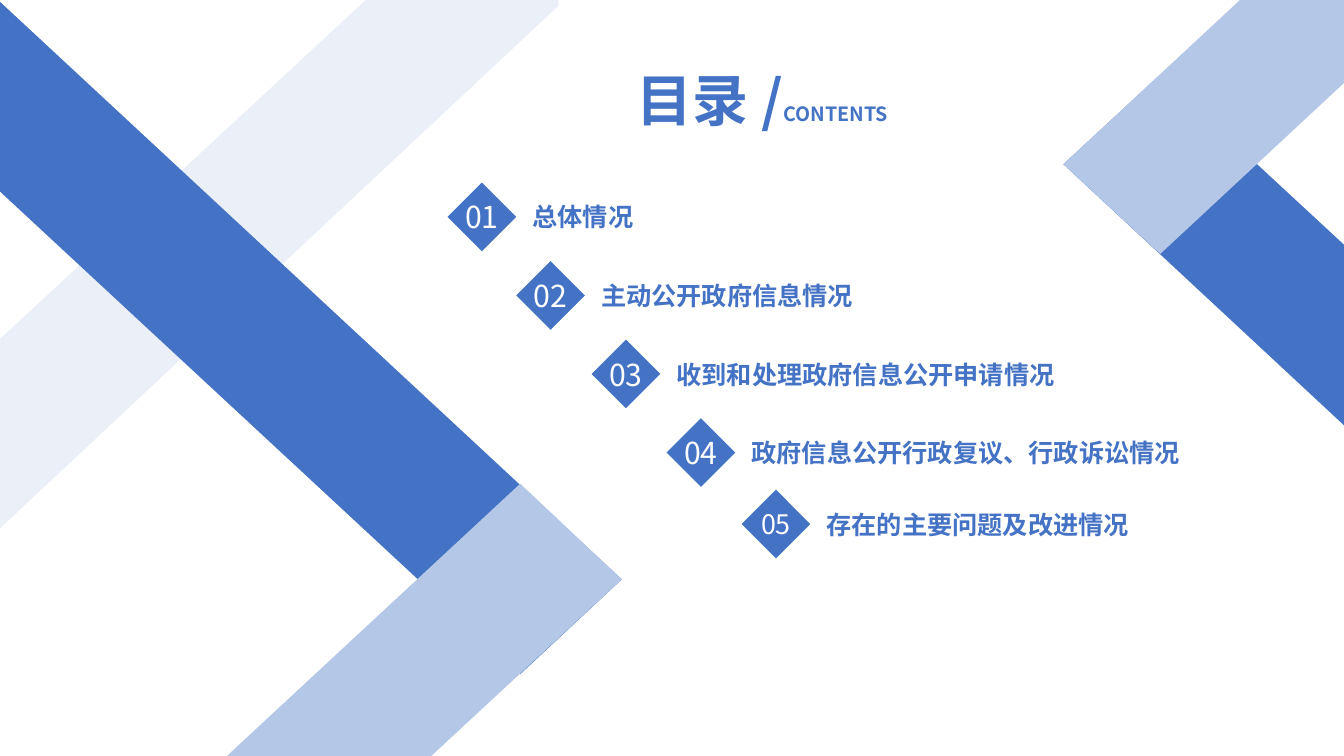
from dataclasses import dataclass

from lxml import etree
from pptx import Presentation
from pptx.dml.color import RGBColor
from pptx.enum.shapes import MSO_SHAPE
from pptx.enum.text import MSO_ANCHOR, MSO_AUTO_SIZE, PP_ALIGN
from pptx.oxml.ns import qn
from pptx.util import Cm, Pt

DIAMOND = MSO_SHAPE.DIAMOND
TOP, MIDDLE = MSO_ANCHOR.TOP, MSO_ANCHOR.MIDDLE
FIXED = MSO_AUTO_SIZE.NONE
CENTER, JUSTIFY = PP_ALIGN.CENTER, PP_ALIGN.JUSTIFY


@dataclass(frozen=True)
class Theme:
    font: str = "Noto Sans CJK SC"
    blue: RGBColor = RGBColor(0x44, 0x72, 0xC4)
    light: RGBColor = RGBColor(0xB4, 0xC7, 0xE7)
    white: RGBColor = RGBColor(0xFF, 0xFF, 0xFF)
    head: float = 40
    sub: float = 14
    label: float = 18


THEME = Theme()

# Band corners in cm, relative to the box of their corner of the slide
PALE = [(14.07, 0), (9.22, 0), (-0.05, 8.59), (-0.05, 13.36), (14.07, 0.15)]
LEFT_DOWN = [(13.11, 16.99), (15.67, 14.6), (-0.05, 0), (-0.05, 4.78)]
LEFT_BACK = [(10.87, 19.05), (15.67, 14.6), (13.11, 12.19), (5.72, 19.05)]
RIGHT_DOWN = [(7.16, 6.25), (2.44, 1.88), (0, 4.14), (7.16, 10.8)]
RIGHT_BACK = [(7.16, 0), (4.45, 0), (0, 4.14), (2.44, 6.4), (7.16, 2.01)]

# Left, top and label width in cm, number size in points, label
ITEMS = [
    (11.28, 4.6, 5.13, 21.6, "总体情况"),
    (13.01, 6.58, 8.33, 21.6, "主动公开政府信息情况"),
    (14.91, 8.56, 10.64, 21.6, "收到和处理政府信息公开申请情况"),
    (16.8, 10.54, 13.16, 21.6, "政府信息公开行政复议、行政诉讼情况"),
    (18.69, 12.34, 10.97, 19.2, "存在的主要问题及改进情况"),
]


def style(para, color, size=None, bold=False, align=JUSTIFY):
    para.alignment = align
    font = para.font
    font.name, font.bold = THEME.font, bold
    font.color.rgb = color
    if size:
        font.size = Pt(size)
    props = para._p.pPr.find(qn("a:defRPr"))
    etree.SubElement(props, qn("a:ea"), typeface=THEME.font)


def clear_inset(frame):
    frame.margin_left = frame.margin_right = 0
    frame.margin_top = frame.margin_bottom = 0


def paint(shape, color, alpha=None):
    """Give a flat fill, with alpha in percent, and no line or shadow."""
    shape.shadow.inherit = False
    shape.line.fill.background()
    shape.fill.solid()
    shape.fill.fore_color.rgb = color
    if alpha:
        tint = shape._element.spPr.find(qn("a:solidFill"))[0]
        etree.SubElement(tint, qn("a:alpha"), val=str(alpha * 1000))


def add_bands(slide, left, top, bands):
    for points, color, alpha in bands:
        spots = [(left + Cm(x), top + Cm(y)) for x, y in points]
        pen = slide.shapes.build_freeform(*spots[0])
        pen.add_line_segments(spots[1:], close=True)
        paint(pen.convert_to_shape(), color, alpha)


def add_title(slide, left, top, width, height):
    title = slide.shapes.title
    title.left, title.top = left, top
    title.width, title.height = width, height
    frame = title.text_frame
    clear_inset(frame)
    frame.word_wrap = True
    frame.auto_size = FIXED
    frame.vertical_anchor = TOP
    para = frame.paragraphs[0]
    para.line_spacing = 1.2
    style(para, THEME.blue, bold=True)
    for text, size in (("目录 /", THEME.head), ("CONTENTS", THEME.sub)):
        run = para.add_run()
        run.text = text
        run.font.size = Pt(size)


def add_item(slide, left, top, width, number, size, text):
    """Place a numbered diamond with its label of the given width."""
    side = Cm(1.73)
    mark = slide.shapes.add_shape(DIAMOND, left, top, side, side)
    paint(mark, THEME.blue)
    frame = mark.text_frame
    clear_inset(frame)
    frame.word_wrap = False
    frame.vertical_anchor = MIDDLE
    frame.text = f"{number:02}"
    style(frame.paragraphs[0], THEME.white, size, align=CENTER)

    label = slide.shapes.add_textbox(
        left + Cm(1.89), top + Cm(0.36), width, Cm(1.02))
    frame = label.text_frame
    frame.word_wrap = True
    frame.text = text
    style(frame.paragraphs[0], THEME.blue, THEME.label, bold=True)


def add_contents(slide):
    add_bands(slide, 0, 0, [
        (PALE, THEME.light, 28),
        (LEFT_DOWN, THEME.blue, None),
        (LEFT_BACK, THEME.light, None),
    ])
    add_bands(slide, Cm(26.8), 0, [
        (RIGHT_DOWN, THEME.blue, None),
        (RIGHT_BACK, THEME.light, None),
    ])
    add_title(slide, Cm(16.05), Cm(1.32), Cm(9.58), Cm(1.91))
    for number, (left, top, width, size, text) in enumerate(ITEMS, 1):
        add_item(slide, Cm(left), Cm(top), Cm(width), number, size, text)


def main():
    deck = Presentation()
    deck.slide_width, deck.slide_height = Cm(33.87), Cm(19.05)
    only_title = deck.slide_layouts.get_by_name("Title Only")
    add_contents(deck.slides.add_slide(only_title))
    deck.save("out.pptx")


if __name__ == "__main__":
    main()
